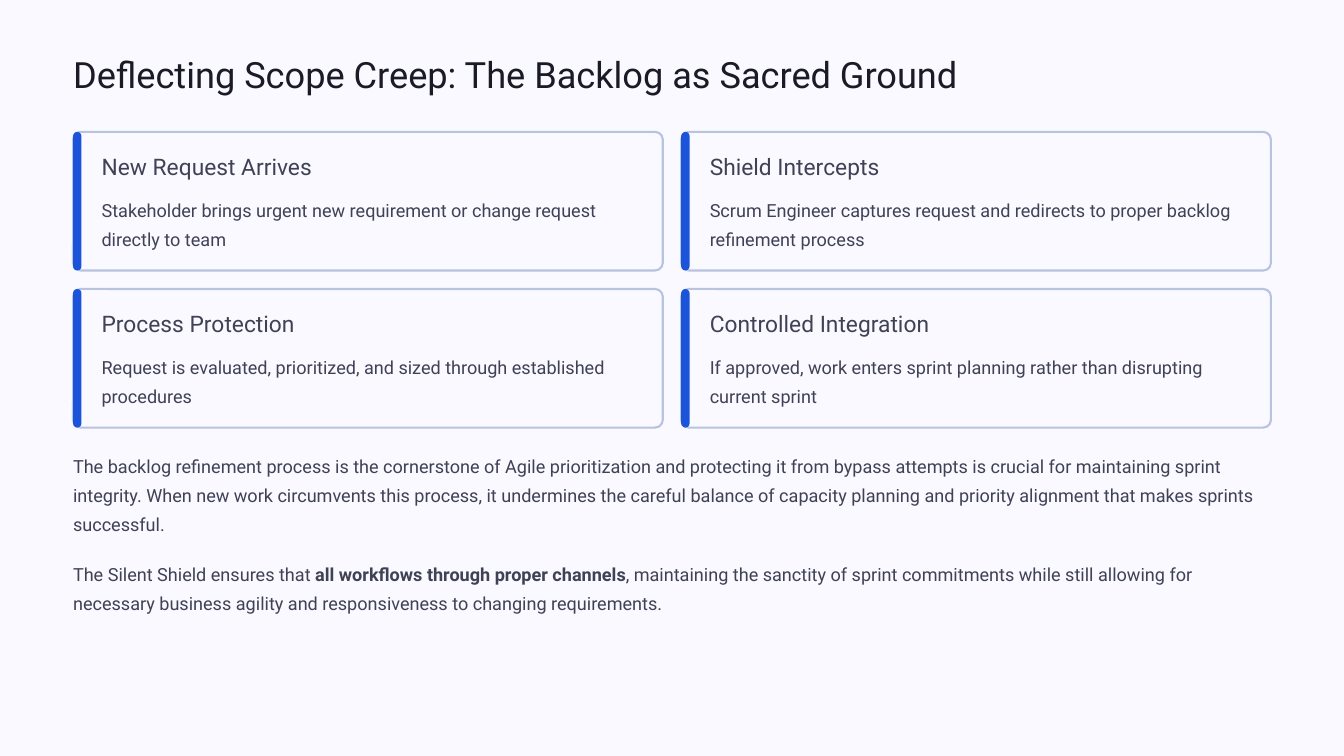
from dataclasses import dataclass
from pptx import Presentation
from pptx import util as u
from pptx.dml.color import RGBColor
from pptx.enum import shapes, text


@dataclass(frozen=True)
class Theme:
    font: str = "Roboto"
    back: str = "F9F9FF"
    ink: str = "1B1B27"
    body: str = "404155"
    edge: str = "B8C3DF"
    bar: str = "1B54DA"
    # (size, line spacing) in points
    title: tuple = (31, 39)
    head: tuple = (19.5, 24)
    copy: tuple = (15.5, 25)


THEME = Theme()
CARDS = [
    ("New Request Arrives",
     "Stakeholder brings urgent new requirement or change request directly to team"),
    ("Shield Intercepts",
     "Scrum Engineer captures request and redirects to proper backlog refinement process"),
    ("Process Protection",
     "Request is evaluated, prioritized, and sized through established procedures"),
    ("Controlled Integration",
     "If approved, work enters sprint planning rather than disrupting current sprint"),
]
NOTES = [
    ["The backlog refinement process is the cornerstone of Agile prioritization and "
     "protecting it from bypass attempts is crucial for maintaining sprint integrity. "
     "When new work circumvents this process, it undermines the careful balance of "
     "capacity planning and priority alignment that makes sprints successful."],
    ["The Silent Shield ensures that ", "all workflows through proper channels",
     ", maintaining the sanctity of sprint commitments while still allowing for "
     "necessary business agility and responsiveness to changing requirements."],
]


def px(n):
    """100 px to the inch."""
    return u.Emu(n * 9144)


def color(code):
    return RGBColor.from_string(code)


def write(shape, parts, style, ink, wrap=True):
    """Fill a text shape; every second part is bold."""
    frame = shape.text_frame
    frame.margin_left = frame.margin_right = 0
    frame.margin_top = frame.margin_bottom = 0
    frame.word_wrap = wrap
    frame.auto_size = text.MSO_AUTO_SIZE.NONE
    frame.vertical_anchor = text.MSO_ANCHOR.TOP
    para = frame.paragraphs[0]
    para.alignment = text.PP_ALIGN.LEFT
    size, lead = style
    para.line_spacing = u.Pt(lead)
    for i, part in enumerate(parts):
        run = para.add_run()
        run.text = part
        run.font.name = THEME.font
        run.font.size = u.Pt(size)
        run.font.bold = i % 2 == 1
        run.font.color.rgb = color(ink)


def label(slide, box, parts, style, wrap=True):
    shape = slide.shapes.add_textbox(*map(px, box))
    write(shape, parts, style, THEME.body, wrap)


def panel(slide, box, fill, bend, edge=None):
    shape = slide.shapes.add_shape(
        shapes.MSO_SHAPE.ROUNDED_RECTANGLE, *map(px, box))
    shape.shadow.inherit = False
    shape.adjustments[0] = bend
    shape.fill.solid()
    shape.fill.fore_color.rgb = color(fill)
    if edge:
        shape.line.color.rgb = color(edge)
        shape.line.width = u.Pt(1.8)
    else:
        shape.line.fill.background()


def heading(slide, box, words):
    title = slide.shapes.title
    title.left, title.top, title.width, title.height = map(px, box)
    write(title, [words], THEME.title, THEME.ink, wrap=False)


def card(slide, box, head, words):
    x, y, w, h = box
    panel(slide, box, THEME.back, 0.055, THEME.edge)
    panel(slide, (x, y, 10, h), THEME.bar, 0.5)
    label(slide, (x + 34, y + 24, w - 58, 34), [head], THEME.head, wrap=False)
    label(slide, (x + 34, y + 71, w - 58, 69), [words], THEME.copy)


def grid(slide, box, cards, cols=2, gap=22):
    x, y, w, h = box
    rows = len(cards) // cols
    wide = (w - gap * (cols - 1)) // cols
    tall = (h - gap * (rows - 1)) // rows
    for i, (head, words) in enumerate(cards):
        row, col = divmod(i, cols)
        spot = (x + col * (wide + gap), y + row * (tall + gap), wide, tall)
        card(slide, spot, head, words)


def notes(slide, box):
    x, y, w, h = box
    label(slide, (x, y, w, 104), NOTES[0], THEME.copy)
    label(slide, (x, y + h - 69, w, 69), NOTES[1], THEME.copy)


def main():
    deck = Presentation()
    deck.slide_width, deck.slide_height = px(1600), px(900)
    slide = deck.slides.add_slide(deck.slide_layouts[5])
    # Background
    slide.background.fill.solid()
    slide.background.fill.fore_color.rgb = color(THEME.back)
    # Title, cards and closing text
    left, wide = 87, 1426
    heading(slide, (left, 60, 1186, 54),
            "Deflecting Scope Creep: The Backlog as Sacred Ground")
    grid(slide, (left, 157, wide, 352), CARDS)
    notes(slide, (left, 533, wide, 198))
    deck.save("out.pptx")


if __name__ == "__main__":
    main()
